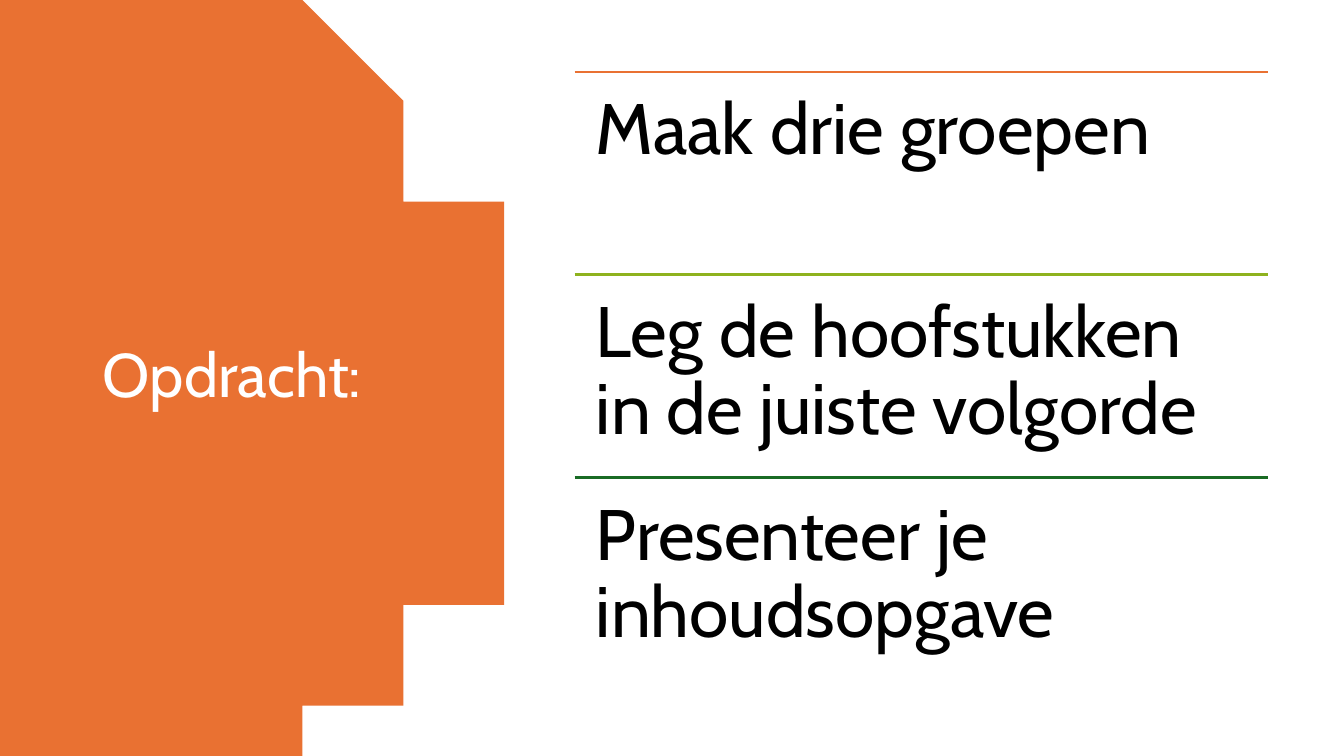
from dataclasses import dataclass
from math import asin, cos, hypot, sin

from lxml import etree
from pptx import Presentation
from pptx.dml.color import RGBColor
from pptx.enum.shapes import MSO_CONNECTOR
from pptx.enum.text import MSO_ANCHOR, MSO_AUTO_SIZE, PP_ALIGN
from pptx.oxml.ns import qn
from pptx.util import Inches, Pt

STRAIGHT = MSO_CONNECTOR.STRAIGHT
TOP, MIDDLE = MSO_ANCHOR.TOP, MSO_ANCHOR.MIDDLE
FIXED = MSO_AUTO_SIZE.NONE
LEFT = PP_ALIGN.LEFT
WIDE, HIGH = 13.33, 7.5
STEPS = 48


@dataclass(frozen=True)
class Theme:
    face: str = "Cabin"
    head: int = 44
    body: int = 51
    rule: float = 1.5
    disc: str = "E97132"
    light: str = "FFFFFF"
    dark: str = "000000"
    rules: tuple = ("E97132", "8EB21E", "196B24")


THEME = Theme()
TASKS = (
    "Maak drie groepen",
    "Leg de hoofstukken in de juiste volgorde",
    "Presenteer je inhoudsopgave",
)


def assign(item, values):
    for name, value in values.items():
        setattr(item, name, value)


def write(shape, text, size, color, anchor, inset):
    frame = shape.text_frame
    margins = {f"margin_{side}": Inches(inset) for side in ("left", "right", "top", "bottom")}
    assign(frame, {"text": text, "word_wrap": True, "auto_size": FIXED,
                   "vertical_anchor": anchor, **margins})
    line = frame.paragraphs[0]
    assign(line, {"alignment": LEFT, "line_spacing": 0.9})
    font = line.runs[0].font
    assign(font, {"name": THEME.face, "size": Pt(size)})
    font.color.rgb = RGBColor.from_string(color)


def panel(slide, box, text):
    left, top, width, height = box
    half = height / 2
    chord = width * 0.574
    bulge = width - chord
    radius = (half ** 2 + bulge ** 2) / (2 * bulge)
    center = left + width - radius
    sweep = asin(half / radius)
    angles = [sweep * (2 * i / STEPS - 1) for i in range(STEPS + 1)]
    arc = [(center + radius * cos(a), top + half + radius * sin(a)) for a in angles]
    pen = slide.shapes.build_freeform(left, top, scale=Inches(1))
    pen.add_line_segments([*arc, (left, top + height)], close=True)
    disc = pen.convert_to_shape()
    disc.shadow.inherit = False
    disc.fill.solid()
    disc.fill.fore_color.rgb = RGBColor.from_string(THEME.disc)
    disc.line.fill.background()
    title = slide.shapes.title
    title.element.addprevious(disc.element)
    assign(title, {"left": Inches(left + 0.92), "top": Inches(top + 0.7),
                   "width": Inches(width * 0.655), "height": Inches(height * 0.812)})
    write(title, text, THEME.head, THEME.light, MIDDLE, 0.1)


def task(slide, box, text, color):
    left, top, width, height = (Inches(n) for n in box)
    rule = slide.shapes.add_connector(STRAIGHT, left, top, left + width, top)
    rule.line.color.rgb = RGBColor.from_string(color)
    rule.line.width = Pt(THEME.rule)
    etree.SubElement(rule.element.spPr, qn("a:effectLst"))
    label = slide.shapes.add_textbox(left, top, width, height)
    write(label, text, THEME.body, THEME.dark, TOP, 0.21)


def agenda(slide, box):
    left, top, width, height = box
    row = height / len(TASKS)
    for i, (text, color) in enumerate(zip(TASKS, THEME.rules)):
        task(slide, (left, top + i * row, width, row), text, color)


def main():
    deck = Presentation()
    assign(deck, {"slide_width": Inches(WIDE), "slide_height": Inches(HIGH)})
    slide = deck.slides.add_slide(deck.slide_layouts[5])
    panel(slide, (0, 0, WIDE * 0.37, HIGH), "Opdracht:")
    agenda(slide, (5.7, 0.71, 6.88, 6.04))
    deck.save("out.pptx")


if __name__ == "__main__":
    main()
